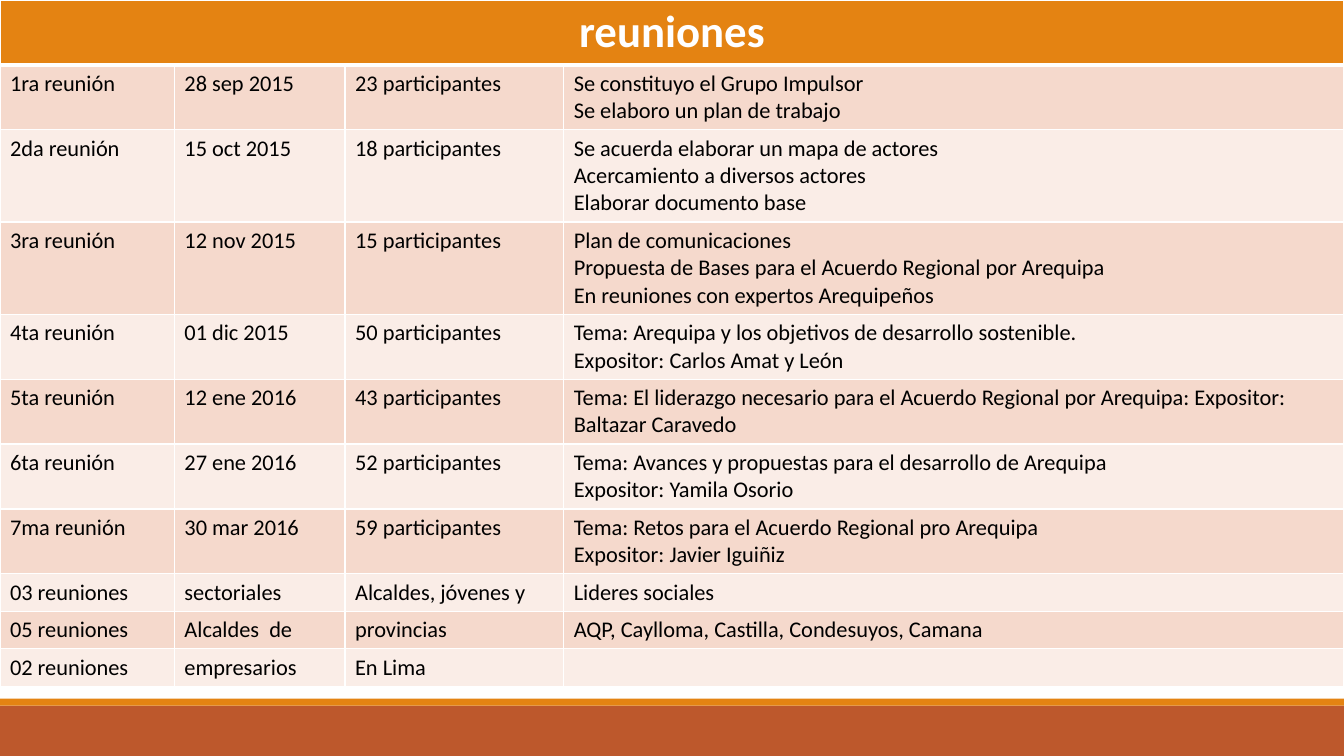
import lxml.etree
import pptx
import pptx.dml.color
import pptx.enum.shapes
import pptx.enum.text
import pptx.oxml.ns
import pptx.util

Pt = pptx.util.Pt
qn = pptx.oxml.ns.qn

FONT = "Calibri"
ORANGE, RUST, WHITE, BLACK = "E48312", "BD582C", "FFFFFF", "000000"
BANDS = ["F5D9CC", "FAEDE7"]
SLIDE_W, SLIDE_H = 960, 540
TITLE_SIZE, BODY_SIZE = 32, 16
LINE_SPACING, CELL_PADDING = 1.22, 7.2
COLUMN_SHARES = [124.6, 121.9, 156.2, 557.3]

TITLE = "reuniones"
# Meeting, date, attendance, topics, lines of text the row takes
MEETINGS = [
    ("1ra reunión", "28 sep 2015", "23 participantes",
     ["Se constituyo el Grupo Impulsor", "Se elaboro un plan de trabajo"], 2),
    ("2da reunión", "15 oct 2015", "18 participantes",
     ["Se acuerda elaborar un mapa de actores", "Acercamiento a diversos actores",
      "Elaborar documento base"], 3),
    ("3ra reunión", "12 nov 2015", "15 participantes",
     ["Plan de comunicaciones",
      "Propuesta de Bases para el Acuerdo Regional por Arequipa",
      "En reuniones con expertos Arequipeños"], 3),
    ("4ta reunión", "01 dic 2015", "50 participantes",
     ["Tema: Arequipa y los objetivos de desarrollo sostenible.",
      "Expositor: Carlos Amat y León"], 2),
    ("5ta reunión", "12 ene 2016", "43 participantes",
     ["Tema: El liderazgo necesario para el Acuerdo Regional por Arequipa: "
      "Expositor: Baltazar Caravedo"], 2),
    ("6ta reunión", "27 ene 2016", "52 participantes",
     ["Tema: Avances y propuestas para el desarrollo de Arequipa",
      "Expositor: Yamila Osorio"], 2),
    ("7ma reunión", "30 mar 2016", "59 participantes",
     ["Tema: Retos para el Acuerdo Regional pro Arequipa",
      "Expositor: Javier Iguiñiz"], 2),
    ("03 reuniones", "sectoriales", "Alcaldes, jóvenes y", ["Lideres sociales"], 1),
    ("05 reuniones", "Alcaldes  de", "provincias",
     ["AQP, Caylloma, Castilla, Condesuyos, Camana"], 1),
    ("02 reuniones", "empresarios", "En Lima", [], 1),
]


def color(hex_code):
    return pptx.dml.color.RGBColor.from_string(hex_code)


def row_height(size, lines=1):
    return round(size * LINE_SPACING * lines + CELL_PADDING, 2)


def style_cell(cell, fill, top=1, bottom=1):
    """Borders go in before the fill, as the schema orders them."""
    properties = cell._tc.get_or_add_tcPr()
    for side, width in (("L", 1), ("R", 1), ("T", top), ("B", bottom)):
        border = lxml.etree.SubElement(properties, qn(f"a:ln{side}"), w=str(Pt(width)))
        solid = lxml.etree.SubElement(border, qn("a:solidFill"))
        lxml.etree.SubElement(solid, qn("a:srgbClr"), val=WHITE)
    cell.fill.solid()
    cell.fill.fore_color.rgb = color(fill)


def write_cell(cell, lines, size, text_color, bold=False, align=None):
    frame = cell.text_frame
    for index, line in enumerate(lines):
        paragraph = frame.add_paragraph() if index else frame.paragraphs[0]
        paragraph.alignment = align
        run = paragraph.add_run()
        run.text = line
        run.font.name = FONT
        run.font.size = Pt(size)
        run.font.bold = bold
        run.font.color.rgb = color(text_color)
    if not lines:
        # An empty cell keeps the body size so its row stays low
        lxml.etree.SubElement(frame.paragraphs[0]._p, qn("a:endParaRPr"),
                              sz=str(size * 100))


def add_footer(slide, left, top, width, height):
    stripe = 5
    bands = [(top, stripe, ORANGE), (top + stripe, height - stripe, RUST)]
    for band_top, band_height, fill in reversed(bands):
        band = slide.shapes.add_shape(
            pptx.enum.shapes.MSO_SHAPE.RECTANGLE,
            Pt(left), Pt(band_top), Pt(width), Pt(band_height))
        band.shadow.inherit = False
        band.fill.solid()
        band.fill.fore_color.rgb = color(fill)
        band.line.fill.background()


def add_meetings(slide, left, top, width):
    heights = [row_height(TITLE_SIZE)]
    heights += [row_height(BODY_SIZE, meeting[-1]) for meeting in MEETINGS]
    table = slide.shapes.add_table(
        len(heights), len(COLUMN_SHARES),
        Pt(left), Pt(top), Pt(width), Pt(sum(heights))).table
    for column, share in zip(table.columns, COLUMN_SHARES):
        column.width = Pt(width * share / sum(COLUMN_SHARES))
    for row, height in zip(table.rows, heights):
        row.height = Pt(height)

    # Title row across all columns
    title = table.cell(0, 0)
    title.merge(table.cell(0, len(COLUMN_SHARES) - 1))
    for cell in table.rows[0].cells:
        style_cell(cell, ORANGE, bottom=3)
    write_cell(title, [TITLE], TITLE_SIZE, WHITE, bold=True,
               align=pptx.enum.text.PP_ALIGN.CENTER)

    # Banded meeting rows
    for index, (name, date, attendance, topics, _) in enumerate(MEETINGS):
        contents = [[name], [date], [attendance], topics]
        for cell, lines in zip(table.rows[index + 1].cells, contents):
            style_cell(cell, BANDS[index % 2], top=1 if index else 3)
            write_cell(cell, lines, BODY_SIZE, BLACK)


def main():
    deck = pptx.Presentation()
    deck.slide_width, deck.slide_height = Pt(SLIDE_W), Pt(SLIDE_H)
    slide = deck.slides.add_slide(deck.slide_layouts[6])
    footer_top = 499
    add_footer(slide, 0, footer_top, SLIDE_W, SLIDE_H - footer_top)
    add_meetings(slide, 0, 0, SLIDE_W)
    deck.save("out.pptx")


if __name__ == "__main__":
    main()
